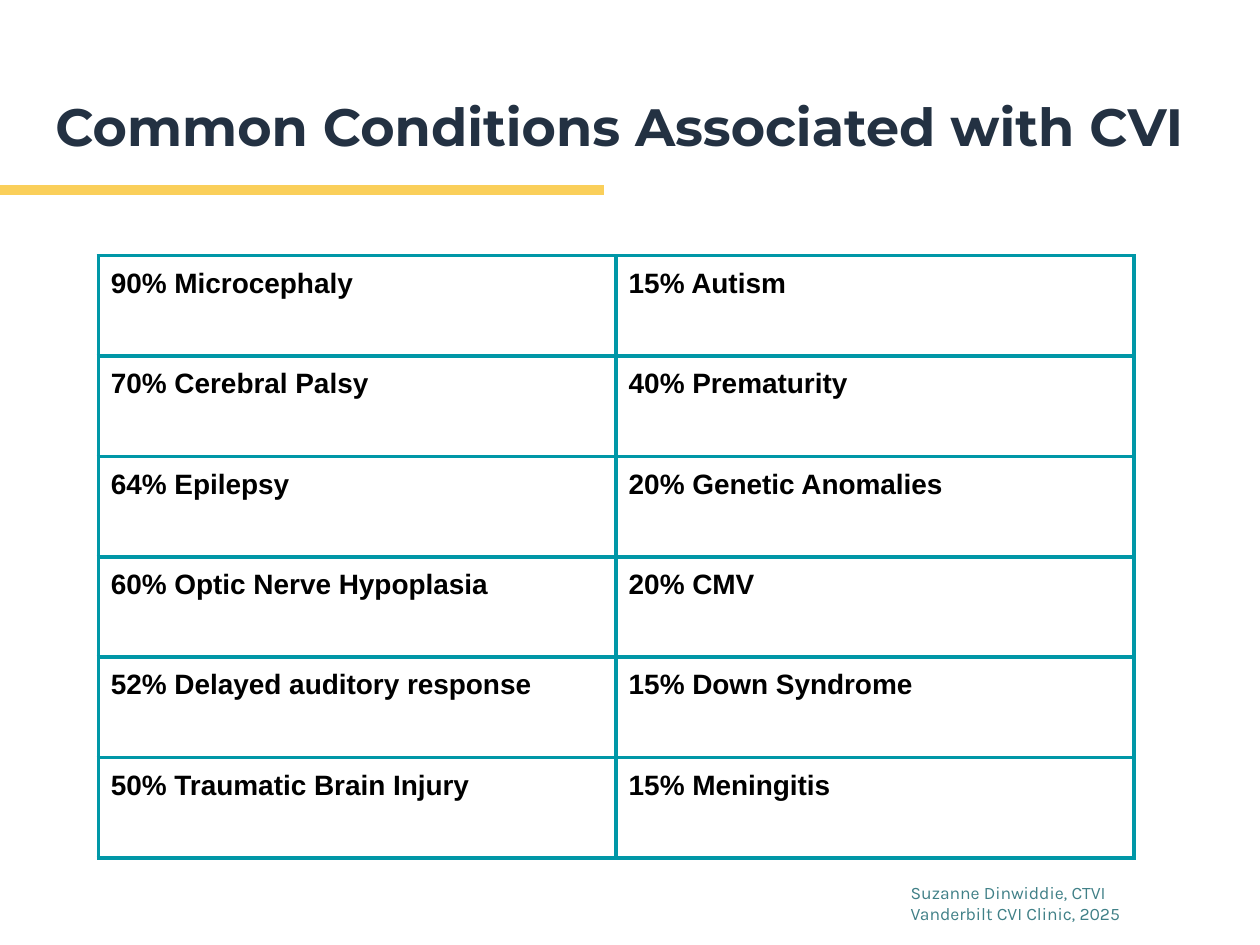
"""Build the slide on common conditions associated with CVI."""
from lxml import etree
from pptx import Presentation
from pptx.dml.color import RGBColor
from pptx.enum.shapes import MSO_CONNECTOR
from pptx.enum.text import MSO_ANCHOR
from pptx.oxml.ns import qn
from pptx.util import Inches, Pt

STRAIGHT = MSO_CONNECTOR.STRAIGHT
TOP = MSO_ANCHOR.TOP
NAVY = RGBColor(0x23, 0x31, 0x42)
YELLOW = RGBColor(0xFA, 0xCF, 0x5A)
TEAL = RGBColor(0x00, 0x97, 0xA7)
GREEN = RGBColor(0x40, 0x80, 0x87)
BLACK = RGBColor(0, 0, 0)
WHITE = RGBColor(0xFF, 0xFF, 0xFF)
PAD = Inches(0.1)
COL_W = Inches(4.11)
ROW_H = Inches(4.78 / 6)
CONDITIONS = [
    ("90% Microcephaly", "15% Autism"),
    ("70% Cerebral Palsy", "40% Prematurity"),
    ("64% Epilepsy", "20% Genetic Anomalies"),
    ("60% Optic Nerve Hypoplasia", "20% CMV"),
    ("52% Delayed auditory response", "15% Down Syndrome"),
    ("50% Traumatic Brain Injury", "15% Meningitis"),
]


def write(p, text, size, font, color, bold=False):
    r = p.add_run()
    r.text = text
    r.font.size = Pt(size)
    r.font.name = font
    r.font.color.rgb = color
    r.font.bold = bold


def add_text(s, box, lines, *style):
    tf = s.shapes.add_textbox(*[Inches(v) for v in box]).text_frame
    tf.word_wrap = True
    tf.vertical_anchor = TOP
    tf.margin_left = tf.margin_right = tf.margin_top = tf.margin_bottom = PAD
    for i, line in enumerate(lines):
        p = tf.add_paragraph() if i else tf.paragraphs[0]
        write(p, line, *style)


prs = Presentation()
prs.slide_width, prs.slide_height = Inches(10), Inches(7.5)
s = prs.slides.add_slide(prs.slide_layouts[6])
s.background.fill.solid()
s.background.fill.fore_color.rgb = WHITE

rule = s.shapes.add_connector(STRAIGHT, 0, Inches(1.51), Inches(4.79), Inches(1.51))
rule.line.color.rgb = YELLOW
rule.line.width = Pt(6)
etree.SubElement(rule.element.spPr, qn("a:effectLst"))

add_text(s, (0.34, 0.65, 9.32, 0.83), ["Common Conditions Associated with CVI"],
         30, "Montserrat", NAVY, True)

table = s.shapes.add_table(len(CONDITIONS), 2, Inches(0.78), Inches(2.03),
                           2 * COL_W, len(CONDITIONS) * ROW_H).table
table.first_row = table.horz_banding = False
for col in table.columns:
    col.width = COL_W
for row, names in zip(table.rows, CONDITIONS):
    row.height = ROW_H
    for cell, name in zip(row.cells, names):
        cell.margin_left = cell.margin_right = PAD
        cell.margin_top = cell.margin_bottom = PAD
        cell.vertical_anchor = TOP
        write(cell.text_frame.paragraphs[0], name, 16, "Arial", BLACK, True)
        tcPr = cell._tc.get_or_add_tcPr()
        for side in ("lnL", "lnR", "lnT", "lnB"):
            ln = etree.SubElement(tcPr, qn(f"a:{side}"), w=str(Pt(2.25)))
            fill = etree.SubElement(ln, qn("a:solidFill"))
            etree.SubElement(fill, qn("a:srgbClr"), val=str(TEAL))
        cell.fill.solid()
        cell.fill.fore_color.rgb = WHITE

add_text(s, (7.13, 6.9, 2.87, 0.54),
         ["Suzanne Dinwiddie, CTVI", "Vanderbilt CVI Clinic, 2025"], 10, "Karla", GREEN)

prs.save("out.pptx")
